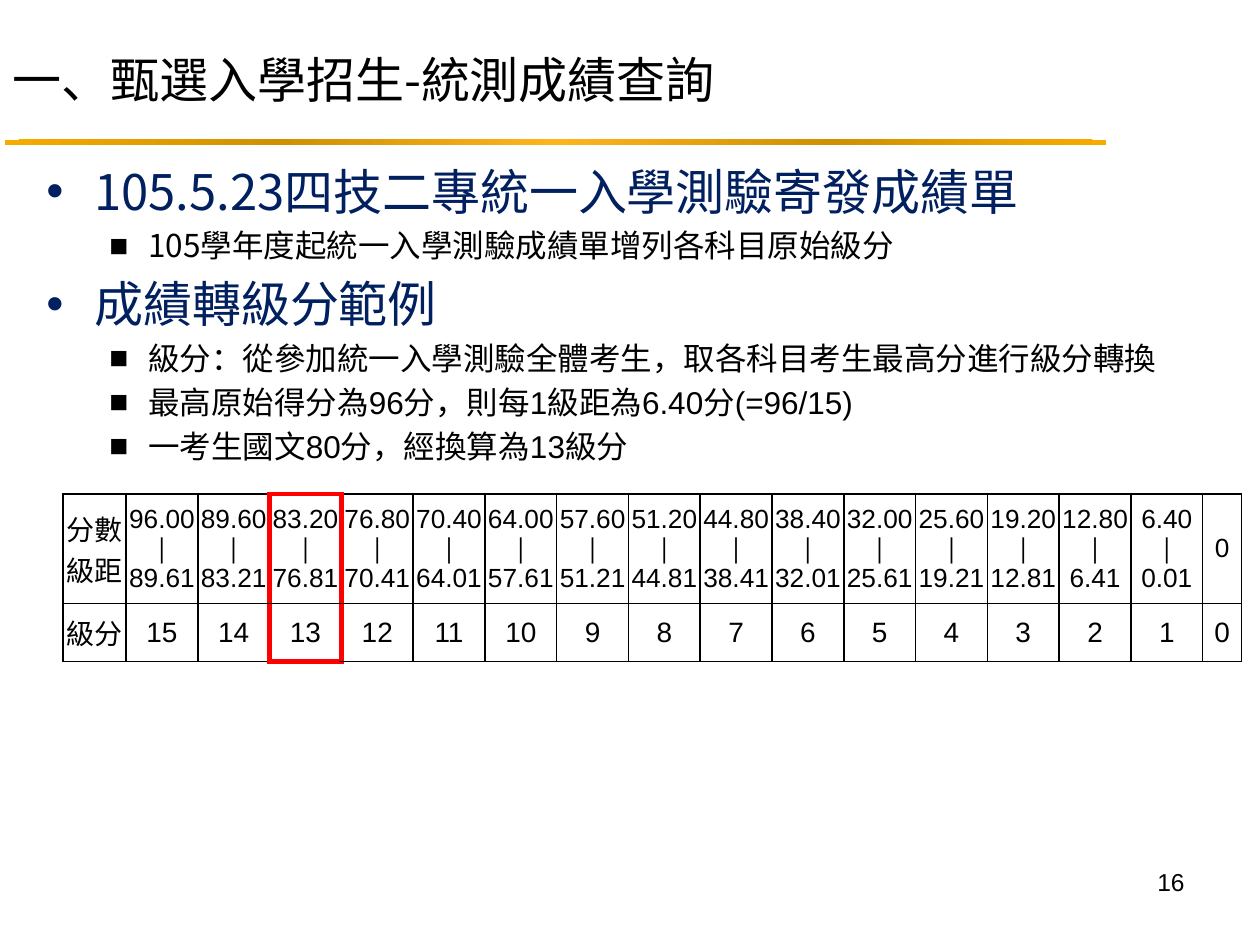
from pptx import Presentation
from pptx.dml.color import RGBColor
from pptx.enum.shapes import MSO_SHAPE
from pptx.enum.text import MSO_ANCHOR, PP_ALIGN
from pptx.oxml import parse_xml
from pptx.oxml.ns import nsdecls, qn
from pptx.util import Inches, Pt

RECTANGLE = MSO_SHAPE.RECTANGLE
MIDDLE = MSO_ANCHOR.MIDDLE
LEFT, CENTER, RIGHT = PP_ALIGN.LEFT, PP_ALIGN.CENTER, PP_ALIGN.RIGHT

LATIN, CJK = "Arial", "Noto Sans CJK SC"
BLACK, NAVY, RED, WHITE = "000000", "002060", "FF0000", "FFFFFF"
BAR_STOPS = [(0, "FFB41D"), (50, "D09000"), (100, "F7AB00")]

# Text, outline level, Latin font
OUTLINE = [
    ("105.5.23四技二專統一入學測驗寄發成績單", 0, CJK),
    ("105學年度起統一入學測驗成績單增列各科目原始級分", 1, CJK),
    ("成績轉級分範例", 0, CJK),
    ("級分：從參加統一入學測驗全體考生，取各科目考生最高分進行級分轉換", 1, CJK),
    ("最高原始得分為96分，則每1級距為6.40分(=96/15)", 1, LATIN),
    ("一考生國文80分，經換算為13級分", 1, LATIN),
]
# Size, colour, bullet, text indent and hanging indent of each outline level
LEVELS = [(28, NAVY, "•", 0.38, 0.38), (18, BLACK, "■", 0.81, 0.31)]

TOP_GRADE, MARKED_GRADE, STEP = 15, 13, 6.4


def color(hex_text):
    return RGBColor.from_string(hex_text)


def write(para, text, size, hue=BLACK, font=LATIN, east_asian=CJK, align=LEFT):
    para.alignment = align
    span = para.add_run()
    span.text = text
    span.font.size = Pt(size)
    span.font.name = font
    span.font.color.rgb = color(hue)
    if east_asian:
        span.font._element.find(qn("a:latin")).addnext(
            parse_xml(f'<a:ea {nsdecls("a")} typeface="{east_asian}"/>'))


def add_bullet(para, mark, hue, indent, hanging):
    props = para._p.get_or_add_pPr()
    props.set("marL", str(Inches(indent)))
    props.set("indent", str(-Inches(hanging)))
    for xml in (f'<a:buClr {nsdecls("a")}><a:srgbClr val="{hue}"/></a:buClr>',
                f'<a:buFont {nsdecls("a")} typeface="{LATIN}"/>',
                f'<a:buChar {nsdecls("a")} char="{mark}"/>'):
        props.append(parse_xml(xml))


def set_borders(cell, **sides):
    """Set each side (L, R, T, B) to a colour and a width, ahead of the cell fill."""
    props = cell._tc.get_or_add_tcPr()
    for position, side in enumerate("LRTB"):
        hue, width = sides.get(side, (BLACK, 1))
        props.insert(position, parse_xml(
            f'<a:ln{side} {nsdecls("a")} w="{Pt(width)}"><a:solidFill>'
            f'<a:srgbClr val="{hue}"/></a:solidFill></a:ln{side}>'))


def add_bar(page, box):
    bar = page.shapes.add_shape(RECTANGLE, *box)
    bar.shadow.inherit = False
    bar.line.fill.background()
    stops = "".join(f'<a:gs pos="{place * 1000}"><a:srgbClr val="{hue}"/></a:gs>'
                    for place, hue in BAR_STOPS)
    bar._element.spPr.find(qn("a:prstGeom")).addnext(parse_xml(
        f'<a:gradFill {nsdecls("a")}><a:gsLst>{stops}</a:gsLst><a:path path="circle">'
        '<a:fillToRect l="50000" t="50000" r="50000" b="50000"/></a:path></a:gradFill>'))


def add_title(page, box):
    title = page.shapes.title
    title.left, title.top, title.width, title.height = box
    title.text_frame.vertical_anchor = MIDDLE
    write(title.text_frame.paragraphs[0], "一、甄選入學招生-統測成績查詢", 28, font=CJK)


def add_outline(page, box):
    frame = page.shapes.add_textbox(*box).text_frame
    frame.word_wrap = True
    for index, (text, level, font) in enumerate(OUTLINE):
        size, hue, mark, indent, hanging = LEVELS[level]
        para = frame.add_paragraph() if index else frame.paragraphs[0]
        para.level = level
        add_bullet(para, mark, hue, indent, hanging)
        para.line_spacing = Pt(1.2 * size)
        if index:
            para.space_before = Pt(0.2 * size)
        write(para, text, size, hue, font)


def fill_cell(cell, lines, size, east_asian=CJK):
    cell.fill.solid()
    cell.fill.fore_color.rgb = color(WHITE)
    cell.vertical_anchor = MIDDLE
    cell.margin_left = cell.margin_right = Inches(0.02)
    cell.margin_top = cell.margin_bottom = 0
    for index, line in enumerate(lines):
        frame = cell.text_frame
        para = frame.add_paragraph() if index else frame.paragraphs[0]
        write(para, line, size, east_asian=east_asian, align=CENTER)


def add_grade_table(page, box):
    grades = range(TOP_GRADE, -1, -1)
    table = page.shapes.add_table(2, len(grades) + 1, *box).table
    table.first_row = table.horz_banding = False
    widths = [0.5] + [0.57] * TOP_GRADE + [0.31]
    for column, width in zip(table.columns, widths):
        column.width = Inches(width)
    for row, height in zip(table.rows, (0.87, 0.46)):
        row.height = Inches(height)

    # Headings, then a score band above each grade
    fill_cell(table.cell(0, 0), ["分數級距"], 16)
    fill_cell(table.cell(1, 0), ["級分"], 16)
    for index, grade in enumerate(grades, start=1):
        band = [f"{STEP * grade:.2f}", "∣", f"{STEP * (grade - 1) + 0.01:.2f}"]
        fill_cell(table.cell(0, index), band if grade else ["0"], 15, east_asian=None)
        fill_cell(table.cell(1, index), [str(grade)], 16)

    # Black grid, with a red frame round the marked grade
    marked = 1 + TOP_GRADE - MARKED_GRADE
    frame_sides = {marked - 1: "R", marked: "LR", marked + 1: "L"}
    for row, outer_side in enumerate("TB"):
        for index in range(len(widths)):
            sides = frame_sides.get(index, "") + (outer_side if index == marked else "")
            set_borders(table.cell(row, index), **{side: (RED, 3) for side in sides})


def add_page_number(page, box):
    frame = page.shapes.add_textbox(*box).text_frame
    frame.word_wrap = True
    write(frame.paragraphs[0], "16", 14, align=RIGHT)


def inches(*lengths):
    return [Inches(length) for length in lengths]


def main():
    deck = Presentation()
    deck.slide_width, deck.slide_height = inches(10, 7.5)
    page = deck.slides.add_slide(deck.slide_layouts[5])
    add_bar(page, inches(0.04, 1.11, 8.74, 0.04))
    add_outline(page, inches(0.27, 1.23, 9.52, 5.43))
    add_page_number(page, inches(7.17, 6.83, 2.33, 0.52))
    add_title(page, inches(0, 0.28, 9, 0.69))
    add_grade_table(page, inches(0.5, 3.92, 9.37, 1.33))
    deck.save("out.pptx")


if __name__ == "__main__":
    main()
